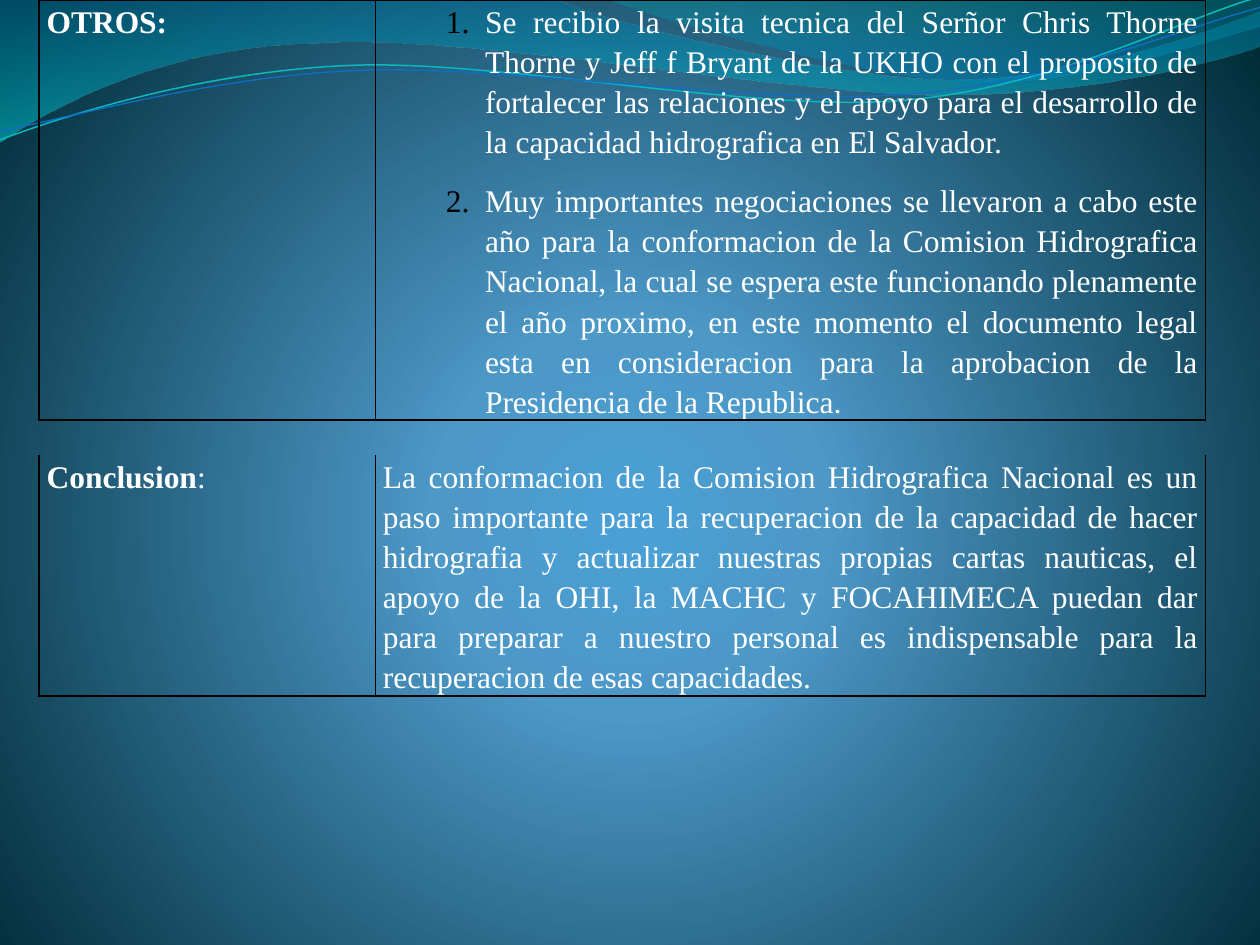
from lxml import etree
from pptx import Presentation
from pptx.dml.color import RGBColor
from pptx.enum.text import PP_ALIGN as Align
from pptx.oxml import parse_xml
from pptx.oxml.ns import nsdecls, qn
from pptx.util import Inches, Pt

WIDTH, HEIGHT = 10, 7.5
FONT = {"name": "Times New Roman", "size": Pt(18)}
WHITE, BLACK = "FFFFFF", "000000"
PLAIN_TABLE_STYLE = "{2D5ABB26-0587-4C30-8999-92F81FD0307C}"

VISIT = ("Se recibio la visita tecnica del Serñor Chris Thorne Thorne y Jeff f Bryant de la UKHO "
         "con el proposito de fortalecer las relaciones y el apoyo para el desarrollo de la "
         "capacidad hidrografica en El Salvador.")
COMMISSION = ("Muy importantes negociaciones se llevaron a cabo este año para la conformacion de la "
              "Comision Hidrografica Nacional, la cual se espera este funcionando plenamente el año "
              "proximo, en este momento el documento legal esta en consideracion para la aprobacion "
              "de la Presidencia de la Republica.")
CONCLUSION = ("La conformacion de la Comision Hidrografica Nacional es un paso importante para la "
              "recuperacion de la capacidad de hacer hidrografia y actualizar nuestras propias "
              "cartas nauticas, el apoyo de la OHI, la MACHC y FOCAHIMECA puedan dar para preparar "
              "a nuestro personal es indispensable para la recuperacion de esas capacidades.")

# Each outline is a list of steps: one point is a straight line, three are a Bezier curve.
WAVES = [
    ([[(0, 0)], [(4.4, -0.01)],
      [(4.76, 0.17), (6.64, 0.63), (7.58, 0.63)], [(8.53, 0.63), (9.58, 0.26), (10, 0.09)],
      [(10.01, 0.36)],
      [(9.83, 0.44), (8.7, 0.76), (7.46, 0.75)], [(6.22, 0.75), (3.82, 0.28), (2.57, 0.34)],
      [(1.29, 0.36), (0.46, 0.83), (-0.01, 1.13)]],
     [(0, "0074A1", 45), (100, "00C6CF", 55)]),
    ([[(4.79, -0.01)], [(5.09, 0.11), (6.82, 0.62), (7.69, 0.65)],
      [(8.56, 0.69), (9.61, 0.32), (10, 0.21)], [(10, 0)]],
     [(0, "00A1A9", 30), (80, "008BBF", 45)]),
]
STRANDS = [
    ([[(0, 1.11)], [(0.48, 0.93), (1.58, 0.57), (2.77, 0.52)],
      [(3.95, 0.47), (5.93, 0.89), (7.13, 0.8)], [(8.33, 0.71), (9.38, 0.15), (9.98, -0.02)]],
     "0AB8BF", 0.85),
    ([[(0, 1.04)], [(0.47, 0.96), (1.64, 0.61), (2.83, 0.56)],
      [(4.03, 0.51), (5.97, 0.84), (7.17, 0.75)], [(8.36, 0.67), (9.41, 0.21), (10, 0.06)]],
     "0F6FC6", 0.75),
]


def rgb(hex_text):
    return RGBColor.from_string(hex_text)


def set_format(target, values):
    for name, value in values.items():
        setattr(target, name, value)


def gradient(stops, direction):
    """Return a gradient fill from (percent, colour, opacity percent) stops."""
    marks = "".join(
        f'<a:gs pos="{pos * 1000}"><a:srgbClr val="{color}">'
        f'<a:alpha val="{opacity * 1000}"/></a:srgbClr></a:gs>' for pos, color, opacity in stops)
    return parse_xml(f'<a:gradFill {nsdecls("a")} rotWithShape="1">'
                     f'<a:gsLst>{marks}</a:gsLst>{direction}</a:gradFill>')


def paint_background(slide):
    slide.background.fill.solid()
    bg_pr = slide.element.find(".//" + qn("p:bgPr"))
    glow = ('<a:path path="circle">'
            '<a:fillToRect l="10000" t="110000" r="10000" b="100000"/></a:path>')
    stops = [(0, "4AA0D6", 100), (25, "4C98C7", 100), (100, "002C38", 100)]
    bg_pr.replace(bg_pr[0], gradient(stops, glow))


def add_outline(slide, steps, close):
    """Draw straight lines between the step ends, then bend those that are curves."""
    start, *ends = [tuple(map(Inches, step[-1])) for step in steps]
    builder = slide.shapes.build_freeform(*start, scale=1.0)
    builder.add_line_segments(ends, close=close)
    outline = builder.convert_to_shape()
    outline.shadow.inherit = False
    segments = list(outline.element.iter(qn("a:lnTo")))
    for segment, step in zip(segments, steps[1:]):
        if len(step) == 3:
            points = "".join(f'<a:pt x="{Inches(x) - outline.left}" y="{Inches(y) - outline.top}"/>'
                             for x, y in step)
            segment.getparent().replace(segment, parse_xml(
                f'<a:cubicBezTo {nsdecls("a")}>{points}</a:cubicBezTo>'))
    return outline


def add_waves(slide):
    for steps, stops in WAVES:
        wave = add_outline(slide, steps, True)
        wave.line.fill.background()
        wave.fill.solid()
        sp_pr = wave.element.spPr
        sp_pr.replace(sp_pr.find(qn("a:solidFill")),
                      gradient(stops, '<a:lin ang="5400000" scaled="0"/>'))
    for steps, color, weight in STRANDS:
        strand = add_outline(slide, steps, False)
        strand.fill.background()
        strand.line.color.rgb = rgb(color)
        strand.line.width = Pt(weight)


def set_borders(cell, sides):
    """Draw the named sides in black and leave the others without a line."""
    tc_pr = cell._tc.get_or_add_tcPr()
    ink = f'<a:solidFill><a:srgbClr val="{BLACK}"/></a:solidFill>'
    for i, side in enumerate("LRTB"):
        fill = ink if side in sides else "<a:noFill/>"
        tc_pr.insert(i, parse_xml(
            f'<a:ln{side} {nsdecls("a")} w="{Pt(1)}">{fill}</a:ln{side}>'))


def number_paragraph(paragraph):
    p_pr = paragraph._p.get_or_add_pPr()
    p_pr.set("marL", str(Inches(0.81)))
    p_pr.set("indent", str(Inches(-0.31)))
    color = etree.SubElement(p_pr, qn("a:buClr"))
    etree.SubElement(color, qn("a:srgbClr"), val=BLACK)
    etree.SubElement(p_pr, qn("a:buFont"), typeface=FONT["name"])
    etree.SubElement(p_pr, qn("a:buAutoNum"), type="arabicPeriod")


def write_cell(cell, paragraphs, sides, align=Align.LEFT, numbered=False):
    """Fill a cell; each paragraph is a list of (text, bold) runs."""
    set_format(cell, {"margin_left": Inches(0.06), "margin_right": Inches(0.06),
                      "margin_top": 0, "margin_bottom": 0})
    cell.fill.background()
    set_borders(cell, sides)
    spacing = {"space_before": Pt(10.9)} if numbered else {"space_after": Pt(10)}
    for i, runs in enumerate(paragraphs):
        paragraph = cell.text_frame.paragraphs[0] if i == 0 else cell.text_frame.add_paragraph()
        set_format(paragraph, {"alignment": align, "line_spacing": 1.15, **spacing})
        if numbered:
            number_paragraph(paragraph)
        for text, bold in runs:
            run = paragraph.add_run()
            run.text = text
            set_format(run.font, {**FONT, "bold": bold})
            run.font.color.rgb = rgb(WHITE)


def add_report_table(slide, left, top, columns, rows):
    frame = slide.shapes.add_table(len(rows), len(columns), Inches(left), Inches(top),
                                   Inches(sum(columns)), Inches(sum(rows)))
    table = frame.table
    set_format(table, {"first_row": False, "horz_banding": False})
    table._tbl.tblPr.find(qn("a:tableStyleId")).text = PLAIN_TABLE_STYLE
    for column, width in zip(table.columns, columns):
        column.width = Inches(width)
    for row, height in zip(table.rows, rows):
        row.height = Inches(height)

    write_cell(table.cell(0, 0), [[("OTROS:", True)]], "LRTB")
    write_cell(table.cell(0, 1), [[(VISIT, False)], [(COMMISSION, False)]], "LRTB",
               Align.JUSTIFY, numbered=True)
    table.cell(1, 0).merge(table.cell(1, 1))
    for column in range(len(columns)):
        gap = table.cell(1, column)
        set_format(gap, {"margin_top": 0, "margin_bottom": 0})
        gap.fill.background()
        set_borders(gap, "T")
        gap.text_frame.paragraphs[0].font.size = Pt(12)
    write_cell(table.cell(2, 0), [[("Conclusion", True), (":", False)]], "LRB")
    write_cell(table.cell(2, 1), [[(CONCLUSION, False)]], "LRB", Align.JUSTIFY)


def main():
    deck = Presentation()
    set_format(deck, {"slide_width": Inches(WIDTH), "slide_height": Inches(HEIGHT)})
    slide = deck.slides.add_slide(deck.slide_layouts[6])
    paint_background(slide)
    add_waves(slide)
    add_report_table(slide, 0.031 * WIDTH, 0, columns=(2.67, 6.59), rows=(3.33, 0.28, 1.91))
    deck.save("out.pptx")


if __name__ == "__main__":
    main()
